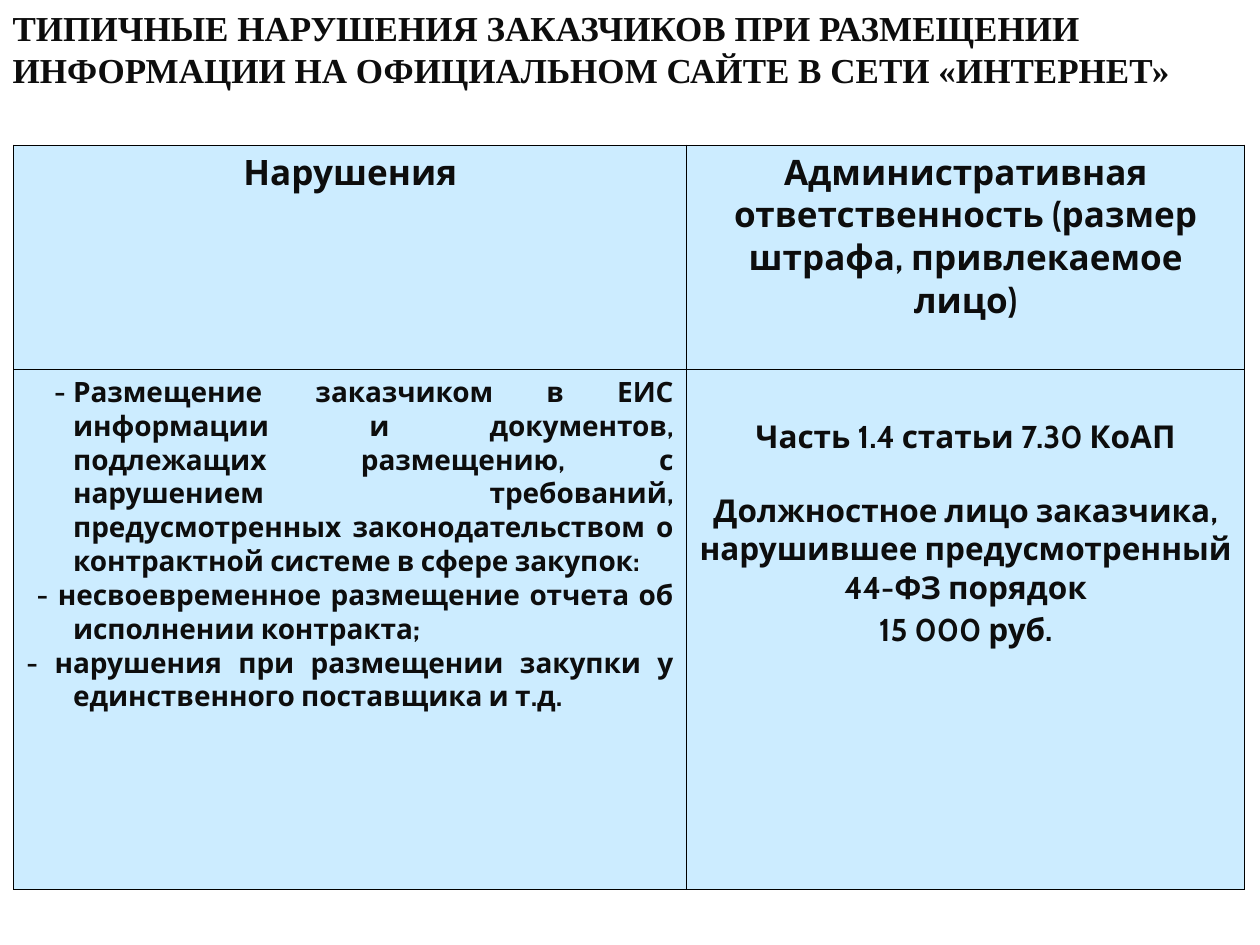
from lxml import etree
from pptx import Presentation
from pptx import util as u
from pptx.dml.color import RGBColor
from pptx.enum import text
from pptx.oxml import ns

INK = RGBColor(0x0D, 0x0D, 0x0D)
BORDER = RGBColor(0x00, 0x00, 0x00)
CELL_FILL = RGBColor(0xCC, 0xEC, 0xFF)
BORDER_WIDTH = u.Pt(0.45)
COLUMNS = (5.34, 4.43)
ROWS = (1.78, 4.13)
HANGING = 0.37
CENTER = {"alignment": text.PP_ALIGN.CENTER}
JUSTIFY = {"alignment": text.PP_ALIGN.JUSTIFY}

TITLE = ("ТИПИЧНЫЕ НАРУШЕНИЯ ЗАКАЗЧИКОВ ПРИ РАЗМЕЩЕНИИ ИНФОРМАЦИИ "
         "НА ОФИЦИАЛЬНОМ САЙТЕ В СЕТИ «ИНТЕРНЕТ»")
HEADERS = ("Нарушения",
           "Административная ответственность (размер штрафа, привлекаемое лицо)")
# Text, first-line indent and tab stop in inches
VIOLATIONS = (
    ("-\tРазмещение заказчиком в ЕИС информации и документов, подлежащих "
     "размещению, с нарушением требований, предусмотренных законодательством "
     "о контрактной системе в сфере закупок:", -0.15, 0.98),
    ("- несвоевременное размещение отчета об исполнении контракта;", -0.29, None),
    ("- нарушения при размещении закупки у единственного поставщика и т.д.",
     -HANGING, None),
)
# Text and space before in points
PENALTIES = (
    ("Часть 1.4 статьи 7.30 КоАП", 0),
    ("Должностное лицо заказчика, нарушившее предусмотренный 44-ФЗ порядок", 20),
    ("15 000 руб.", 2),
)


def apply_format(target, values):
    for name, value in values.items():
        setattr(target, name, value)


def write_paragraph(frame, index, content, size, font="Cabin", **values):
    paragraph = frame.add_paragraph() if index else frame.paragraphs[0]
    run = paragraph.add_run()
    run.text = content
    apply_format(paragraph, values)
    apply_format(run.font, {"name": font, "size": u.Pt(size), "bold": True})
    run.font.color.rgb = INK
    return paragraph


def set_indent(paragraph, first_line, tab_stop):
    properties = paragraph._p.get_or_add_pPr()
    properties.set("marL", str(u.Inches(HANGING)))
    properties.set("indent", str(u.Inches(first_line)))
    if tab_stop:
        tabs = etree.SubElement(properties, ns.qn("a:tabLst"))
        etree.SubElement(tabs, ns.qn("a:tab"), pos=str(u.Inches(tab_stop)), algn="l")


def style_cell(cell):
    """Give the cell thin borders on all sides and a plain fill."""
    properties = cell._tc.get_or_add_tcPr()
    for side in ("lnL", "lnR", "lnT", "lnB"):
        line = etree.SubElement(properties, ns.qn(f"a:{side}"), w=str(BORDER_WIDTH))
        fill = etree.SubElement(line, ns.qn("a:solidFill"))
        etree.SubElement(fill, ns.qn("a:srgbClr"), val=str(BORDER))
    cell.fill.solid()
    cell.fill.fore_color.rgb = CELL_FILL


def add_title(slide, width):
    title = slide.shapes.title
    apply_format(title, {"left": 0, "top": 0, "width": width, "height": u.Inches(0.77)})
    apply_format(title.text_frame, {
        "word_wrap": True,
        "auto_size": text.MSO_AUTO_SIZE.NONE,
        "vertical_anchor": text.MSO_ANCHOR.TOP,
    })
    write_paragraph(title.text_frame, 0, TITLE, 20, "Times New Roman",
                    alignment=text.PP_ALIGN.LEFT)


def add_violations_table(slide):
    table = slide.shapes.add_table(
        len(ROWS), len(COLUMNS), u.Inches(0.11), u.Inches(1.15),
        u.Inches(sum(COLUMNS)), u.Inches(sum(ROWS))).table
    for column, width in zip(table.columns, COLUMNS):
        column.width = u.Inches(width)
    for row, height in zip(table.rows, ROWS):
        row.height = u.Inches(height)
    for cell in table.iter_cells():
        style_cell(cell)

    for column, header in enumerate(HEADERS):
        write_paragraph(table.cell(0, column).text_frame, 0, header, 20, **CENTER)

    violations, penalties = table.cell(1, 0), table.cell(1, 1)
    for index, (content, first_line, tab_stop) in enumerate(VIOLATIONS):
        paragraph = write_paragraph(violations.text_frame, index, content, 16, **JUSTIFY)
        set_indent(paragraph, first_line, tab_stop)

    penalties.margin_top = u.Inches(0.39)
    for index, (content, gap) in enumerate(PENALTIES):
        write_paragraph(penalties.text_frame, index, content, 18,
                        space_before=u.Pt(gap), **CENTER)


def main():
    presentation = Presentation()
    apply_format(presentation, {"slide_width": u.Inches(10), "slide_height": u.Inches(7.5)})
    slide = presentation.slides.add_slide(presentation.slide_layouts[5])
    add_title(slide, presentation.slide_width)
    add_violations_table(slide)
    presentation.save("out.pptx")


if __name__ == "__main__":
    main()
